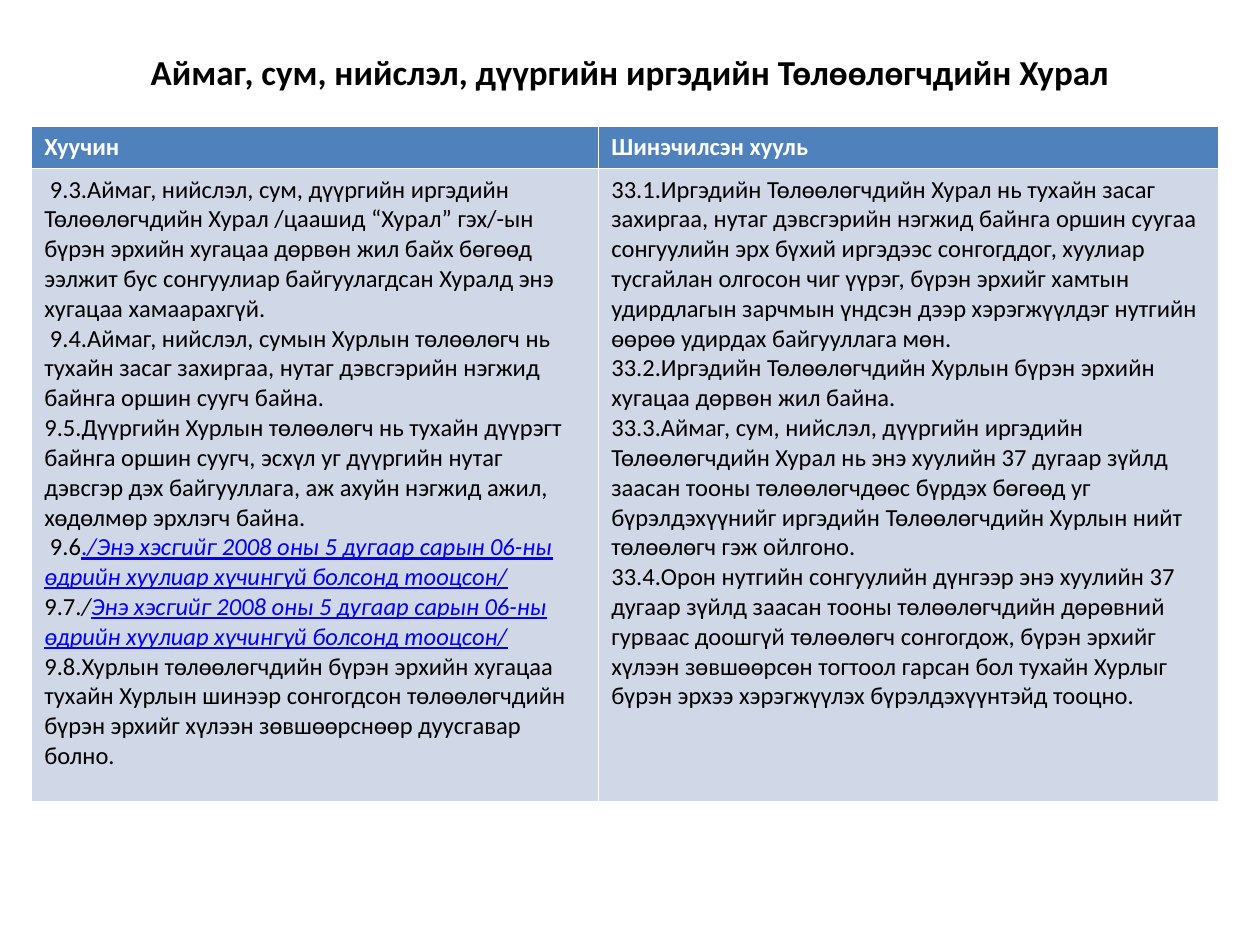
from pptx import Presentation
from pptx.dml.color import RGBColor
from pptx.enum import text
from pptx.util import Cm, Pt

FONT = "Calibri"
BLACK = RGBColor(0x00, 0x00, 0x00)
WHITE = RGBColor(0xFF, 0xFF, 0xFF)
LINK_BLUE = RGBColor(0x00, 0x00, 0xFF)
HEADER_FILL = RGBColor(0x4F, 0x81, 0xBD)
BODY_FILL = RGBColor(0xD0, 0xD8, 0xE8)

TITLE = "Аймаг, сум, нийслэл, дүүргийн иргэдийн Төлөөлөгчдийн Хурал"
HEADERS = ["Хуучин", "Шинэчилсэн хууль"]

# Run styles used in the law text: (colour, italic, underline)
PLAIN = (BLACK, False, False)
ITALIC = (BLACK, True, False)
LINK = (LINK_BLUE, False, True)
LINK_ITALIC = (LINK_BLUE, True, True)

# Each paragraph is a list of (wording, style)
OLD_LAW = [
    [(" 9.3.Аймаг, нийслэл, сум, дүүргийн иргэдийн Төлөөлөгчдийн Хурал /цаашид “Хурал” "
      "гэх/-ын бүрэн эрхийн хугацаа дөрвөн жил байх бөгөөд ээлжит бус сонгуулиар "
      "байгуулагдсан Хуралд энэ хугацаа хамаарахгүй.", PLAIN)],
    [(" 9.4.Аймаг, нийслэл, сумын Хурлын төлөөлөгч нь тухайн засаг захиргаа, нутаг "
      "дэвсгэрийн нэгжид байнга оршин суугч байна.", PLAIN)],
    [("9.5.Дүүргийн Хурлын төлөөлөгч нь тухайн дүүрэгт байнга оршин суугч, эсхүл уг "
      "дүүргийн нутаг дэвсгэр дэх байгууллага, аж ахуйн нэгжид ажил, хөдөлмөр эрхлэгч "
      "байна.", PLAIN)],
    [(" 9.6", PLAIN), (".", LINK),
     ("/Энэ хэсгийг 2008 оны 5 дугаар сарын 06-ны өдрийн хуулиар хүчингүй болсонд "
      "тооцсон/", LINK_ITALIC)],
    [("9.7.", PLAIN), ("/", ITALIC),
     ("Энэ хэсгийг 2008 оны 5 дугаар сарын 06-ны өдрийн хуулиар хүчингүй болсонд "
      "тооцсон/", LINK_ITALIC)],
    [("9.8.Хурлын төлөөлөгчдийн бүрэн эрхийн хугацаа тухайн Хурлын шинээр сонгогдсон "
      "төлөөлөгчдийн бүрэн эрхийг хүлээн зөвшөөрснөөр дуусгавар болно.", PLAIN)],
]
NEW_LAW = [
    [("33.1.Иргэдийн Төлөөлөгчдийн Хурал нь тухайн засаг захиргаа, нутаг дэвсгэрийн "
      "нэгжид байнга оршин суугаа сонгуулийн эрх бүхий иргэдээс сонгогддог, хуулиар "
      "тусгайлан олгосон чиг үүрэг, бүрэн эрхийг хамтын удирдлагын зарчмын үндсэн дээр "
      "хэрэгжүүлдэг нутгийн өөрөө удирдах байгууллага мөн.", PLAIN)],
    [("33.2.Иргэдийн Төлөөлөгчдийн Хурлын бүрэн эрхийн хугацаа дөрвөн жил байна.", PLAIN)],
    [("33.3.Аймаг, сум, нийслэл, дүүргийн иргэдийн Төлөөлөгчдийн Хурал нь энэ хуулийн 37 "
      "дугаар зүйлд заасан тооны төлөөлөгчдөөс бүрдэх бөгөөд уг бүрэлдэхүүнийг иргэдийн "
      "Төлөөлөгчдийн Хурлын нийт төлөөлөгч гэж ойлгоно.", PLAIN)],
    [("33.4.Орон нутгийн сонгуулийн дүнгээр энэ хуулийн 37 дугаар зүйлд заасан тооны "
      "төлөөлөгчдийн дөрөвний гурваас доошгүй төлөөлөгч сонгогдож, бүрэн эрхийг хүлээн "
      "зөвшөөрсөн тогтоол гарсан бол тухайн Хурлыг бүрэн эрхээ хэрэгжүүлэх "
      "бүрэлдэхүүнтэйд тооцно.", PLAIN)],
]


def format_run(run, size, color, bold=False, italic=False, underline=False):
    font = run.font
    font.name, font.size, font.bold = FONT, Pt(size), bold
    font.italic, font.underline = italic, underline
    font.color.rgb = color


def place_title(slide, left, top, width, height):
    title = slide.shapes.title
    title.left, title.top, title.width, title.height = left, top, width, height
    frame = title.text_frame
    frame.text = TITLE
    frame.vertical_anchor = text.MSO_ANCHOR.MIDDLE
    paragraph = frame.paragraphs[0]
    paragraph.alignment = text.PP_ALIGN.CENTER
    format_run(paragraph.runs[0], 20, BLACK, bold=True)


def fill_cell(cell, color):
    cell.fill.solid()
    cell.fill.fore_color.rgb = color


def write_law(cell, paragraphs):
    frame = cell.text_frame
    for index, parts in enumerate(paragraphs):
        paragraph = frame.add_paragraph() if index else frame.paragraphs[0]
        for wording, (color, italic, underline) in parts:
            run = paragraph.add_run()
            run.text = wording
            format_run(run, 14, color, italic=italic, underline=underline)


def place_comparison(slide, left, top, width, height):
    table = slide.shapes.add_table(2, 2, left, top, width, height).table

    # Column and row sizes
    table.columns[0].width = Cm(11.43)
    table.columns[1].width = width - Cm(11.43)
    table.rows[0].height = Cm(0.82)
    table.rows[1].height = height - Cm(0.82)

    # One column per version of the law
    for column, (header, law) in enumerate(zip(HEADERS, (OLD_LAW, NEW_LAW))):
        header_cell, law_cell = table.cell(0, column), table.cell(1, column)
        header_cell.text_frame.text = header
        format_run(header_cell.text_frame.paragraphs[0].runs[0], 14, WHITE, bold=True)
        fill_cell(header_cell, HEADER_FILL)
        write_law(law_cell, law)
        fill_cell(law_cell, BODY_FILL)


def main():
    presentation = Presentation()
    presentation.slide_width, presentation.slide_height = Cm(25.4), Cm(19.05)
    slide = presentation.slides.add_slide(presentation.slide_layouts[5])
    place_title(slide, Cm(1.27), Cm(0.76), Cm(22.86), Cm(1.35))
    place_comparison(slide, Cm(0.64), Cm(2.54), Cm(23.92), Cm(13.58))
    presentation.save("out.pptx")


if __name__ == "__main__":
    main()
